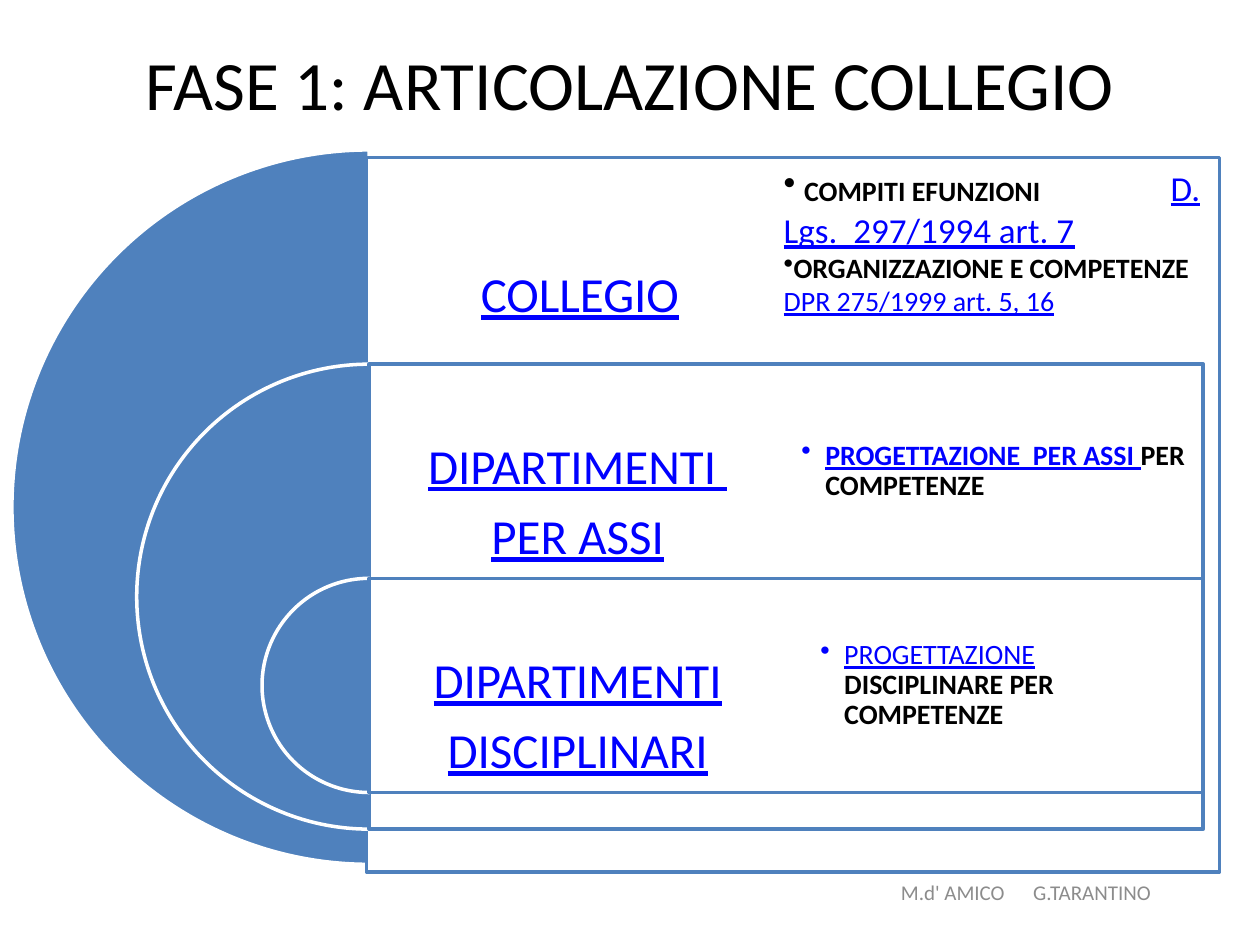
"""Build the slide on how the teachers' board is divided into departments."""
from lxml import etree
from pptx import Presentation
from pptx.dml.color import RGBColor
from pptx.enum.shapes import MSO_SHAPE as Shape
from pptx.enum.text import MSO_ANCHOR as Anchor, PP_ALIGN as Align
from pptx.oxml.ns import qn
from pptx.util import Inches, Pt

BLACK = RGBColor(0x00, 0x00, 0x00)
WHITE = RGBColor(0xFF, 0xFF, 0xFF)
BLUE = RGBColor(0x4F, 0x81, 0xBD)
LINK = RGBColor(0x00, 0x00, 0xFF)
GRAY = RGBColor(0x8C, 0x8C, 0x8C)

CENTER_X = 2.93
FIRST_TOP = 1.19
ROW_HEIGHT = 1.7


class SlideBuilder:
    def __init__(self, slide, font="Calibri"):
        self.slide = slide
        self.font = font

    def shape(self, kind, box, fill, line):
        shape = self.slide.shapes.add_shape(kind, *map(Inches, box))
        shape.shadow.inherit = False
        shape.fill.solid()
        shape.fill.fore_color.rgb = fill
        shape.line.color.rgb = line
        shape.line.width = Pt(2)
        return shape

    def half_disc(self, top, diameter):
        box = (CENTER_X - diameter / 2, top, diameter, diameter)
        pie = self.shape(Shape.PIE, box, BLUE, WHITE)
        pie.adjustments[0] = 54
        pie.adjustments[1] = 162

    def panel(self, box):
        panel = self.shape(Shape.RECTANGLE, box, WHITE, BLUE)
        color = panel.fill._xPr.find(qn("a:solidFill"))[0]
        etree.SubElement(color, qn("a:alpha"), val="90000")

    def text_box(self, box, insets, anchor=Anchor.MIDDLE):
        frame = self.slide.shapes.add_textbox(*map(Inches, box)).text_frame
        frame.word_wrap = True
        frame.vertical_anchor = anchor
        (frame.margin_left, frame.margin_top,
         frame.margin_right, frame.margin_bottom) = map(Inches, insets)
        return frame

    def paragraph(self, frame, runs, align=Align.LEFT, spacing=1.0, after=0):
        paragraph = frame.paragraphs[0]
        if paragraph.runs:
            paragraph = frame.add_paragraph()
        paragraph.alignment = align
        paragraph.line_spacing = spacing
        paragraph.space_after = Pt(after)
        for text, size, color, *styles in runs:
            run = paragraph.add_run()
            run.text = text
            run.font.name = self.font
            run.font.size = Pt(size)
            run.font.color.rgb = color
            run.font.bold = "bold" in styles
            run.font.underline = "underline" in styles
        return paragraph

    def bullet(self, paragraph, hanging):
        properties = paragraph._p.get_or_add_pPr()
        properties.set("marL", str(Inches(hanging)))
        properties.set("indent", str(-Inches(hanging)))
        etree.SubElement(properties, qn("a:buChar"), char="•")

    def tab_stop(self, paragraph, position):
        properties = paragraph._p.get_or_add_pPr()
        tabs = etree.SubElement(properties, qn("a:tabLst"))
        etree.SubElement(tabs, qn("a:tab"), pos=str(Inches(position)), algn="l")

    def label(self, box, lines):
        frame = self.text_box(box, (0.09, 0.53, 0.09, 0.02))
        for line in lines:
            runs = [(line, 28, LINK, "underline")]
            self.paragraph(frame, runs, Align.CENTER, 0.9, 9.8)

    def detail(self, box, runs):
        frame = self.text_box(box, (0.27,) * 4)
        self.bullet(self.paragraph(frame, runs, spacing=0.9, after=2.4), 0.19)


def main():
    presentation = Presentation()
    presentation.slide_width = Inches(10)
    presentation.slide_height = Inches(7.5)
    builder = SlideBuilder(presentation.slides.add_slide(presentation.slide_layouts[6]))

    title = builder.text_box((0.5, 0.3, 9, 0.72), (0.1, 0.05, 0.1, 0.05))
    builder.paragraph(title, [("FASE 1: ARTICOLAZIONE COLLEGIO", 39.6, BLACK)], Align.CENTER)

    levels = [
        (5.67, (2.91, 1.25, 6.77), ["COLLEGIO"]),
        (3.69, (2.93, 2.89, 6.62), ["DIPARTIMENTI ", "PER ASSI"]),
        (1.7, (2.93, 4.59, 6.62), ["DIPARTIMENTI", "DISCIPLINARI"]),
    ]
    for row, (diameter, (left, top, width), lines) in enumerate(levels):
        builder.half_disc(FIRST_TOP + row * ROW_HEIGHT, diameter)
        builder.panel((left, top, width, diameter))
        builder.label((left, top, width / 2, ROW_HEIGHT), lines)

    duties = builder.text_box((5.95, 1.19, 3.88, ROW_HEIGHT), (0.27, 0.13, 0.27, 0.1), Anchor.TOP)
    functions = builder.paragraph(duties, [
        (" ", 20, BLACK),
        ("COMPITI EFUNZIONI\t", 16, BLACK, "bold"),
        ("D. Lgs.  297/1994 art. 7", 20, LINK, "underline"),
    ])
    builder.bullet(functions, 0)
    builder.tab_stop(functions, 3.07)
    powers = builder.paragraph(duties, [
        ("ORGANIZZAZIONE E COMPETENZE ", 16, BLACK, "bold"),
        ("DPR 275/1999 art. 5, 16", 16, LINK, "underline"),
    ])
    builder.bullet(powers, 0)

    builder.detail((6.09, 2.89, 3.59, ROW_HEIGHT), [
        ("PROGETTAZIONE  PER ASSI ", 16, LINK, "bold", "underline"),
        ("PER COMPETENZE", 16, BLACK, "bold"),
    ])
    builder.detail((6.24, 4.59, 3.31, ROW_HEIGHT), [
        ("PROGETTAZIONE", 16, LINK, "underline"),
        (" ", 16, BLACK),
        ("DISCIPLINARE PER COMPETENZE", 16, BLACK, "bold"),
    ])

    footer = builder.text_box((6.56, 6.88, 3.17, 0.4), (0.59, 0.05, 0.1, 0.05))
    authors = builder.paragraph(footer, [("M.d' AMICO\tG.TARANTINO", 12, GRAY)])
    builder.tab_stop(authors, 1.05)

    presentation.save("out.pptx")


if __name__ == "__main__":
    main()
